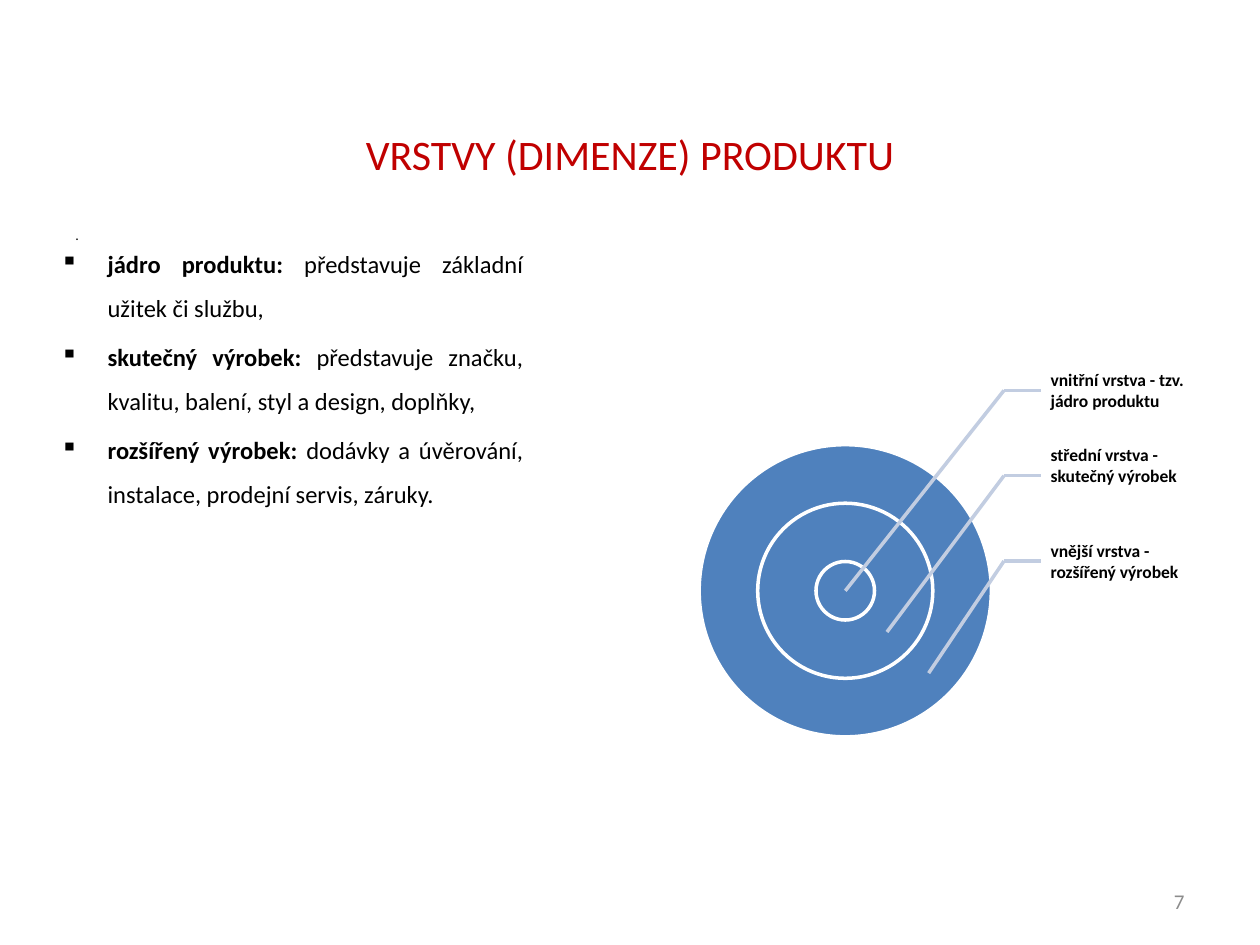
import pptx
import pptx.dml.color
import pptx.enum.shapes
import pptx.enum.text
import pptx.util
from lxml import etree
from pptx.oxml.ns import qn

Cm = pptx.util.Cm
Pt = pptx.util.Pt
Align = pptx.enum.text.PP_ALIGN
Anchor = pptx.enum.text.MSO_ANCHOR


def color(value):
    return pptx.dml.color.RGBColor.from_string(value)


def write(para, text, size=14, ink="000000", bold=False):
    """Add one formatted span of text to a paragraph."""
    span = para.add_run()
    span.text = text
    span.font.name = "Calibri"
    span.font.size = Pt(size)
    span.font.bold = bold
    span.font.color.rgb = color(ink)


class SlideBuilder:
    """Holds the shared style and the slide being filled."""

    title_ink = "C00000"
    number_ink = "8C8C8C"
    ring_fill = "4F81BD"
    ring_line = "FFFFFF"
    leader_line = "C2CDE1"
    line_width = Pt(2)
    indent = Cm(0.95)

    def __init__(self, page):
        self.page = page

    def frame(self, left, top, width, height, anchor=Anchor.TOP, insets=None):
        """Add a wrapping text box; insets are left, top, right, bottom in cm."""
        box = self.page.shapes.add_textbox(Cm(left), Cm(top), Cm(width), Cm(height))
        frame = box.text_frame
        frame.word_wrap = True
        frame.vertical_anchor = anchor
        if insets:
            (frame.margin_left, frame.margin_top,
             frame.margin_right, frame.margin_bottom) = map(Cm, insets)
        return frame

    def text(self, text, place, align=Align.LEFT, anchor=Anchor.MIDDLE,
             insets=None, **style):
        para = self.frame(*place, anchor, insets).paragraphs[0]
        para.alignment = align
        write(para, text, **style)

    def bullets(self, items, place):
        """Add a justified list of (bold term, explanation) pairs."""
        frame = self.frame(*place)
        for index, (term, explanation) in enumerate(items):
            para = frame.add_paragraph() if index else frame.paragraphs[0]
            properties = para._p.get_or_add_pPr()
            properties.set("marL", str(self.indent))
            properties.set("indent", str(-self.indent))
            etree.SubElement(properties, qn("a:buChar"), char="▪")
            para.alignment = Align.JUSTIFY
            para.line_spacing = 1.5
            if index:
                para.space_before = Pt(2.8)
            write(para, term, bold=True)
            write(para, " " + explanation)

    def ring(self, center_x, center_y, diameter):
        ring = self.page.shapes.add_shape(
            pptx.enum.shapes.MSO_SHAPE.OVAL,
            Cm(center_x - diameter / 2), Cm(center_y - diameter / 2),
            Cm(diameter), Cm(diameter))
        ring.shadow.inherit = False
        ring.fill.solid()
        ring.fill.fore_color.rgb = color(self.ring_fill)
        ring.line.color.rgb = color(self.ring_line)
        ring.line.width = self.line_width

    def line(self, start, end):
        line = self.page.shapes.add_connector(
            pptx.enum.shapes.MSO_CONNECTOR.STRAIGHT, *map(Cm, start + end))
        line.line.color.rgb = color(self.leader_line)
        line.line.width = self.line_width
        etree.SubElement(line._element.spPr, qn("a:effectLst"))

    def callout(self, text, middle, target, bottom_inset):
        """Add a label centred on a height and its bent leader to a target."""
        label_left, elbow_left, height = 20.98, 20.24, 1.72
        self.text(text, (label_left, middle - height / 2, 2.95, height),
                  insets=(0.2, 0.03, 0.03, bottom_inset), size=10, bold=True)
        elbow = (elbow_left, middle)
        self.line(elbow, (label_left, middle))
        self.line(elbow, target)


def main():
    deck = pptx.Presentation()
    deck.slide_width, deck.slide_height = Cm(25.4), Cm(19.05)
    slide = SlideBuilder(deck.slides.add_slide(deck.slide_layouts[6]))

    slide.text("VRSTVY (DIMENZE) PRODUKTU", (1.27, 2.26, 22.86, 1.68),
               align=Align.CENTER, size=24, ink=slide.title_ink)
    slide.text(".", (1.27, 4.45, 11.23, 12.57), anchor=Anchor.TOP, size=8)
    slide.bullets([
        ("jádro produktu:", "představuje základní užitek či službu,"),
        ("skutečný výrobek:",
         "představuje značku, kvalitu, balení, styl a design, doplňky,"),
        ("rozšířený výrobek:",
         "dodávky a úvěrování, instalace, prodejní servis, záruky."),
    ], (0.97, 4.6, 9.83, 12.57))
    slide.text("7", (18.21, 17.65, 5.92, 1.02),
               align=Align.RIGHT, size=12, ink=slide.number_ink)

    center_x, center_y = 17.04, 11.91
    for diameter in (5.89, 3.53, 1.18):
        slide.ring(center_x, center_y, diameter)

    layers = [
        ("vnitřní vrstva - tzv. jádro produktu", 0.03),
        ("střední vrstva - skutečný výrobek", 0.45),
        ("vnější vrstva - rozšířený výrobek", 0.03),
    ]
    for index, (label, bottom_inset) in enumerate(layers):
        target = (center_x + 0.84 * index, center_y + 0.83 * index)
        slide.callout(label, 7.87 + 1.72 * index, target, bottom_inset)

    deck.save("out.pptx")


if __name__ == "__main__":
    main()
